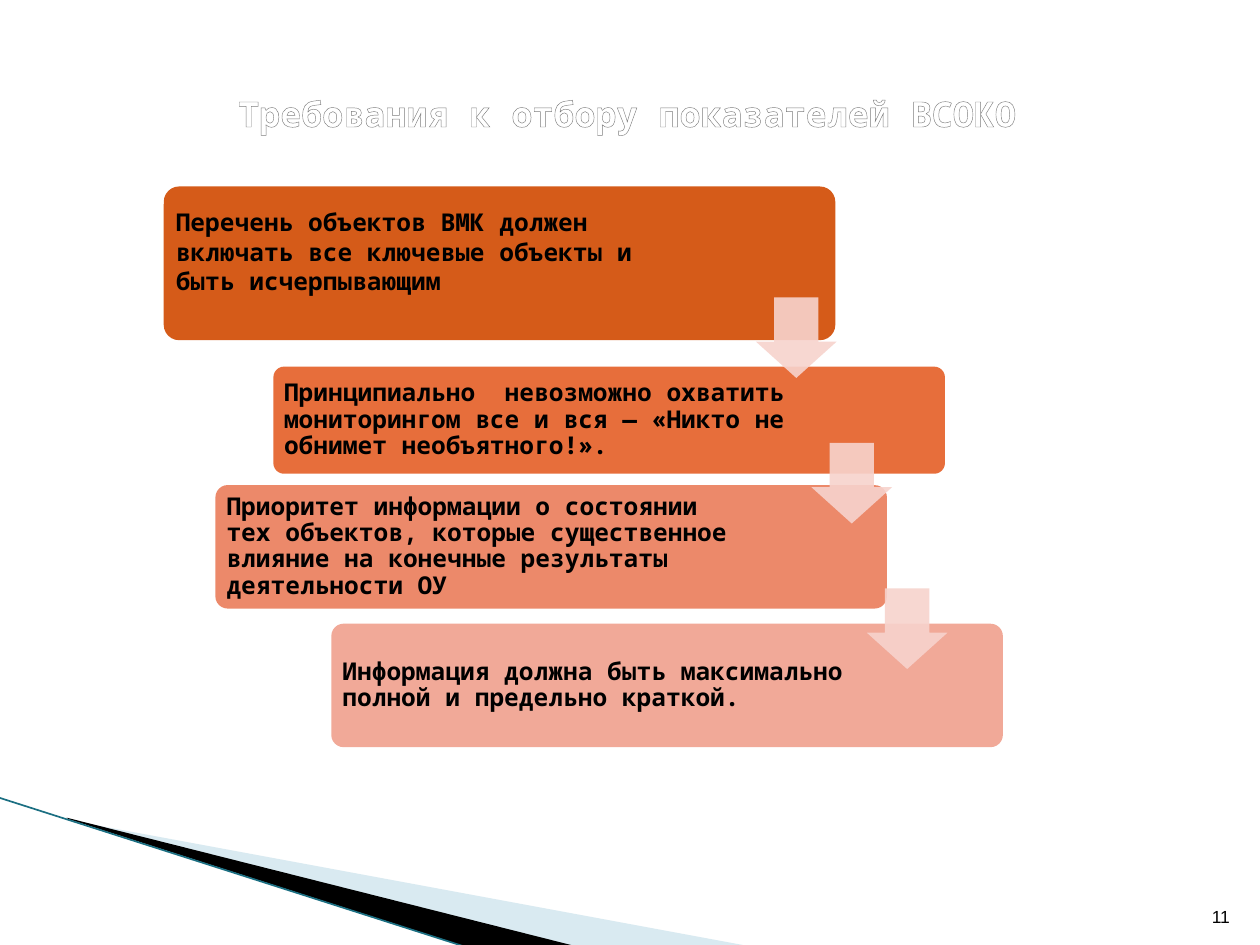
import pptx
import pptx.util
import pptx.dml.color
import pptx.enum.shapes
import pptx.enum.text
import pptx.oxml
import pptx.oxml.ns
from dataclasses import dataclass
from lxml import etree

Inches, Pt = pptx.util.Inches, pptx.util.Pt
Rgb = pptx.dml.color.RGBColor.from_string
Kind = pptx.enum.shapes.MSO_SHAPE
Align = pptx.enum.text.PP_ALIGN
Anchor = pptx.enum.text.MSO_ANCHOR
qn = pptx.oxml.ns.qn


@dataclass
class Theme:
    mono: str = "Noto Sans Mono"
    sans: str = "Arial"
    ink: str = "000000"
    steps: tuple = ("D55B19", "E76E3B", "EC896A", "F1A998")
    arrow: str = "F7D3CD"
    pale: str = "A0CBDC"
    edge: str = "1B6F82"
    rim: str = "7D7D7D"
    shine: tuple = ((0, "FFFFFF"), (9, "FFFFFF"), (50, "7F7F7F"),
                    (79, "FFFFFF"), (100, "FFFFFF"))
    head: int = 20
    body: int = 14
    small: int = 10


theme = Theme()


def paint(shape, color, alpha=100):
    """Solid fill without line or shadow."""
    shape.shadow.inherit = False
    shape.fill.solid()
    shape.fill.fore_color.rgb = Rgb(color)
    shape.line.fill.background()
    if alpha < 100:
        tone = shape.fill._xPr.find(qn("a:solidFill"))[0]
        etree.SubElement(tone, qn("a:alpha")).set("val", str(alpha * 1000))


def style(para, face, size, bold=False):
    para.font.name = face
    para.font.size = Pt(size)
    para.font.bold = bold
    para.font.color.rgb = Rgb(theme.ink)


prs = pptx.Presentation()
prs.slide_width, prs.slide_height = Inches(10), Inches(7.5)
slide = prs.slides.add_slide(prs.slide_layouts[5])
shapes = slide.shapes

# Corner wedges
wedges = [
    (theme.pale, 40, [(0.55, 6.51), (5.95, 7.51), (4.56, 7.51), (0.55, 6.5)]),
    (theme.ink, 100, [(0.53, 6.49), (4.57, 7.51), (3.72, 7.52), (0.54, 6.5)]),
]
for color, alpha, spots in wedges:
    spots = [(Inches(x), Inches(y)) for x, y in spots]
    pen = shapes.build_freeform(*spots[0])
    pen.add_line_segments(spots[1:], close=True)
    paint(pen.convert_to_shape(), color, alpha)

edge = shapes.add_connector(pptx.enum.shapes.MSO_CONNECTOR.STRAIGHT,
                            Inches(-0.01), Inches(6.33), Inches(3.71), Inches(7.52))
edge.line.color.rgb = Rgb(theme.edge)
edge.line.width = Pt(0.95)
etree.SubElement(edge._element.spPr, qn("a:effectLst"))

# Steps: left, top, height, line spacing, bottom inset, text
steps = [
    (1.3, 1.48, 1.22, 1.0, 0.25,
     "Перечень объектов ВМК должен включать все ключевые объекты и быть исчерпывающим"),
    (2.17, 2.91, 0.85, 0.9, 0.06,
     "Принципиально  невозможно охватить мониторингом все и вся — «Никто не обнимет необъятного!»."),
    (1.71, 3.85, 0.98, 0.9, 0.06,
     "Приоритет информации о состоянии тех объектов, которые существенное влияние "
     "на конечные результаты деятельности ОУ"),
    (2.63, 4.95, 0.98, 0.9, 0.06,
     "Информация должна быть максимально полной и предельно краткой."),
]
for color, (left, top, high, gap, base, text) in zip(theme.steps, steps):
    box = shapes.add_shape(Kind.ROUNDED_RECTANGLE, Inches(left), Inches(top),
                           Inches(5.33), Inches(high))
    box.adjustments[0] = 0.1
    paint(box, color)
    frame = box.text_frame
    frame.word_wrap = True
    frame.vertical_anchor = Anchor.MIDDLE
    frame.margin_left = frame.margin_top = Inches(0.06)
    frame.margin_right, frame.margin_bottom = Inches(1.14), Inches(base)
    para = frame.paragraphs[0]
    para.text = text
    para.alignment = Align.LEFT
    para.line_spacing = gap
    style(para, theme.mono, theme.body, True)

# Arrows between the steps
for i in range(3):
    arrow = shapes.add_shape(Kind.DOWN_ARROW, Inches(6 + 0.44 * i),
                             Inches(2.36 + 1.155 * i), Inches(0.64), Inches(0.64))
    arrow.adjustments[0], arrow.adjustments[1] = 0.55, 0.45
    paint(arrow, theme.arrow, 90)

# Title with outlined, shaded letters
title = shapes.title
title.left, title.top = Inches(1.69), Inches(0.68)
title.width, title.height = Inches(6.58), Inches(0.44)
frame = title.text_frame
frame.word_wrap = True
frame.vertical_anchor = Anchor.TOP
para = frame.paragraphs[0]
para.alignment = Align.CENTER
run = para.add_run()
run.text = "Требования к отбору показателей ВСОКО"
run.font.name, run.font.size, run.font.bold = theme.mono, Pt(theme.head), True
stops = "".join(f'<a:gs pos="{pos * 1000}"><a:srgbClr val="{color}"/></a:gs>'
                for pos, color in theme.shine)
space = pptx.oxml.ns.nsdecls("a")
look = [
    f'<a:ln {space} w="10541"><a:solidFill><a:srgbClr val="{theme.rim}"/></a:solidFill></a:ln>',
    f'<a:gradFill {space}><a:gsLst>{stops}</a:gsLst><a:lin ang="5400000"/></a:gradFill>',
]
for i, part in enumerate(look):
    run.font._element.insert(i, pptx.oxml.parse_xml(part))

# Page number
page = shapes.add_textbox(Inches(9.46), Inches(7.01), Inches(0.4), Inches(0.4))
page.text_frame.word_wrap = True
page.text_frame.vertical_anchor = Anchor.BOTTOM
para = page.text_frame.paragraphs[0]
para.text = "11"
para.alignment = Align.RIGHT
style(para, theme.sans, theme.small)

prs.save("out.pptx")
